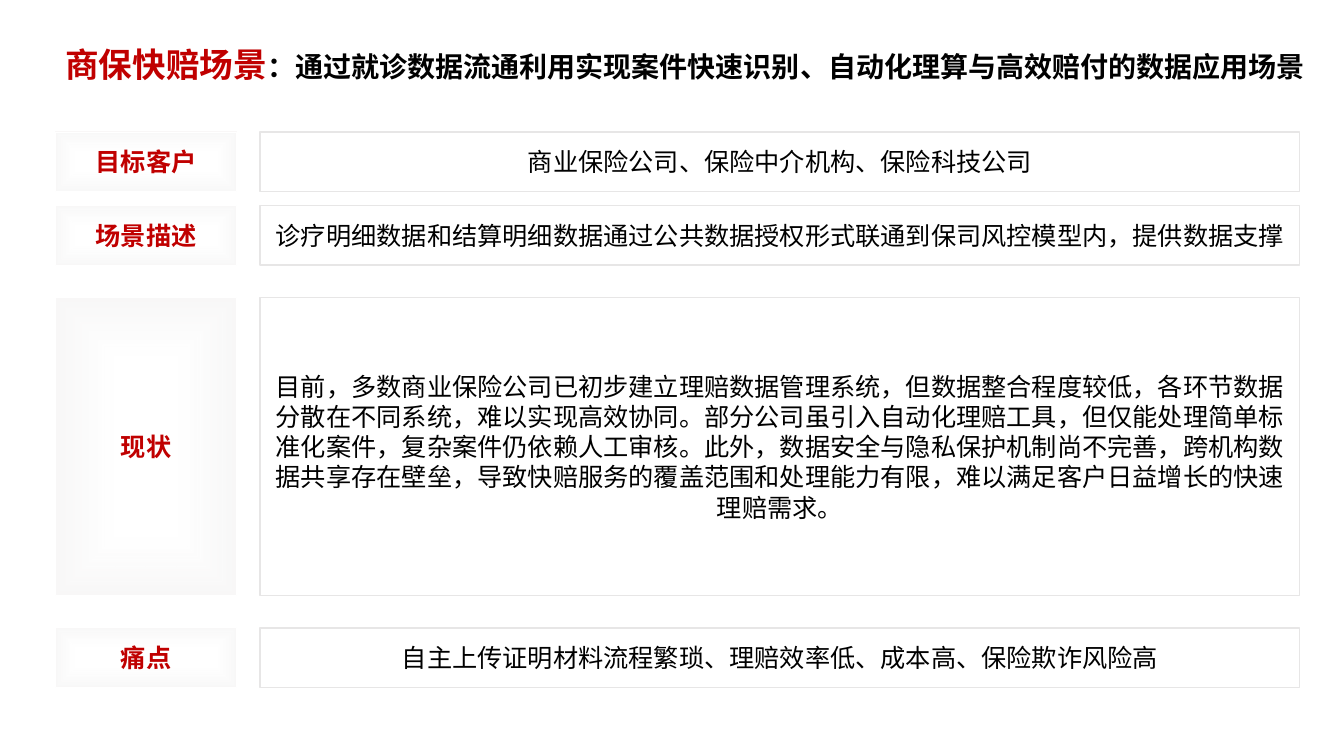
from dataclasses import dataclass

from lxml import etree
from pptx import Presentation
from pptx.dml.color import RGBColor
from pptx.enum.shapes import MSO_SHAPE
from pptx.enum.text import MSO_ANCHOR, MSO_AUTO_SIZE, PP_ALIGN
from pptx.oxml import parse_xml
from pptx.oxml.ns import nsdecls, qn
from pptx.util import Inches, Pt

RECTANGLE = MSO_SHAPE.RECTANGLE
MIDDLE = MSO_ANCHOR.MIDDLE
CENTER = PP_ALIGN.CENTER
FIT_SHAPE = MSO_AUTO_SIZE.SHAPE_TO_FIT_TEXT


@dataclass(frozen=True)
class Theme:
    font: str = "Noto Sans CJK SC"
    accent: str = "C00000"
    text: str = "000000"
    white: str = "FFFFFF"
    border: str = "E7E6E6"
    glow_inner: str = "F1F0F0"
    glow_outer: str = "ECEBEB"
    heading_size: int = 24
    subheading_size: int = 20
    body_size: int = 18


THEME = Theme()

LEFT = 0.55
LABEL_WIDTH = 1.8
CONTENT_LEFT = 2.58
CONTENT_WIDTH = 10.31
ROW_HEIGHT = 0.59
STATUS_HEIGHT = 2.96

# top, height, label, content
ROWS = [
    (1.31, ROW_HEIGHT, "目标客户", "商业保险公司、保险中介机构、保险科技公司"),
    (2.04, ROW_HEIGHT, "场景描述",
     "诊疗明细数据和结算明细数据通过公共数据授权形式联通到保司风控模型内，提供数据支撑"),
    (2.95, STATUS_HEIGHT, "现状",
     "目前，多数商业保险公司已初步建立理赔数据管理系统，但数据整合程度较低，"
     "各环节数据分散在不同系统，难以实现高效协同。部分公司虽引入自动化理赔工具，"
     "但仅能处理简单标准化案件，复杂案件仍依赖人工审核。此外，"
     "数据安全与隐私保护机制尚不完善，跨机构数据共享存在壁垒，"
     "导致快赔服务的覆盖范围和处理能力有限，难以满足客户日益增长的快速理赔需求。"),
    (6.23, ROW_HEIGHT, "痛点", "自主上传证明材料流程繁琐、理赔效率低、成本高、保险欺诈风险高"),
]


def add_run(paragraph, text, size, color, bold=False):
    """Add a run whose font also covers East Asian characters."""
    run = paragraph.add_run()
    run.text = text
    font = run.font
    font.name = THEME.font
    font.size = Pt(size)
    font.bold = bold
    font.color.rgb = RGBColor.from_string(color)
    east_asian = etree.SubElement(run._r.get_or_add_rPr(), qn("a:ea"))
    east_asian.set("typeface", THEME.font)


def add_box(slide, left, top, width, height, line_color, line_width):
    shape = slide.shapes.add_shape(
        RECTANGLE, Inches(left), Inches(top), Inches(width), Inches(height))
    shape.shadow.inherit = False
    shape.line.color.rgb = RGBColor.from_string(line_color)
    shape.line.width = Pt(line_width)
    frame = shape.text_frame
    frame.word_wrap = True
    frame.vertical_anchor = MIDDLE
    frame.paragraphs[0].alignment = CENTER
    return shape


def fill_with_glow(shape):
    """Fill with a gradient that is clear in the centre and grey at the edges."""
    gradient = parse_xml(
        f'<a:gradFill {nsdecls("a")} rotWithShape="1"><a:gsLst>'
        f'<a:gs pos="35000"><a:srgbClr val="{THEME.glow_inner}">'
        '<a:alpha val="0"/></a:srgbClr></a:gs>'
        f'<a:gs pos="95000"><a:srgbClr val="{THEME.glow_outer}">'
        '<a:alpha val="32000"/></a:srgbClr></a:gs></a:gsLst>'
        '<a:path path="shape">'
        '<a:fillToRect l="50000" t="50000" r="50000" b="50000"/>'
        '</a:path></a:gradFill>')
    shape._element.spPr.find(qn("a:prstGeom")).addnext(gradient)


def add_label(slide, top, height, text):
    shape = add_box(slide, LEFT, top, LABEL_WIDTH, height, THEME.white, 0.75)
    fill_with_glow(shape)
    add_run(shape.text_frame.paragraphs[0], text,
            THEME.body_size, THEME.accent, bold=True)


def add_content(slide, top, height, text):
    shape = add_box(slide, CONTENT_LEFT, top, CONTENT_WIDTH, height, THEME.border, 1)
    shape.fill.solid()
    shape.fill.fore_color.rgb = RGBColor.from_string(THEME.white)
    add_run(shape.text_frame.paragraphs[0], text, THEME.body_size, THEME.text)


def add_title(slide, heading, subheading):
    box = slide.shapes.add_textbox(
        Inches(LEFT), Inches(0.39), Inches(12.78), Inches(0.5))
    frame = box.text_frame
    frame.word_wrap = True
    frame.auto_size = FIT_SHAPE
    paragraph = frame.paragraphs[0]
    add_run(paragraph, heading, THEME.heading_size, THEME.accent, bold=True)
    add_run(paragraph, subheading, THEME.subheading_size, THEME.text, bold=True)


def main():
    presentation = Presentation()
    presentation.slide_width = Inches(13.33)
    presentation.slide_height = Inches(7.5)
    slide = presentation.slides.add_slide(presentation.slide_layouts[6])
    for top, height, label, content in ROWS:
        add_label(slide, top, height, label)
        add_content(slide, top, height, content)
    add_title(slide, "商保快赔场景",
              "：通过就诊数据流通利用实现案件快速识别、自动化理算与高效赔付的数据应用场景")
    presentation.save("out.pptx")


if __name__ == "__main__":
    main()
